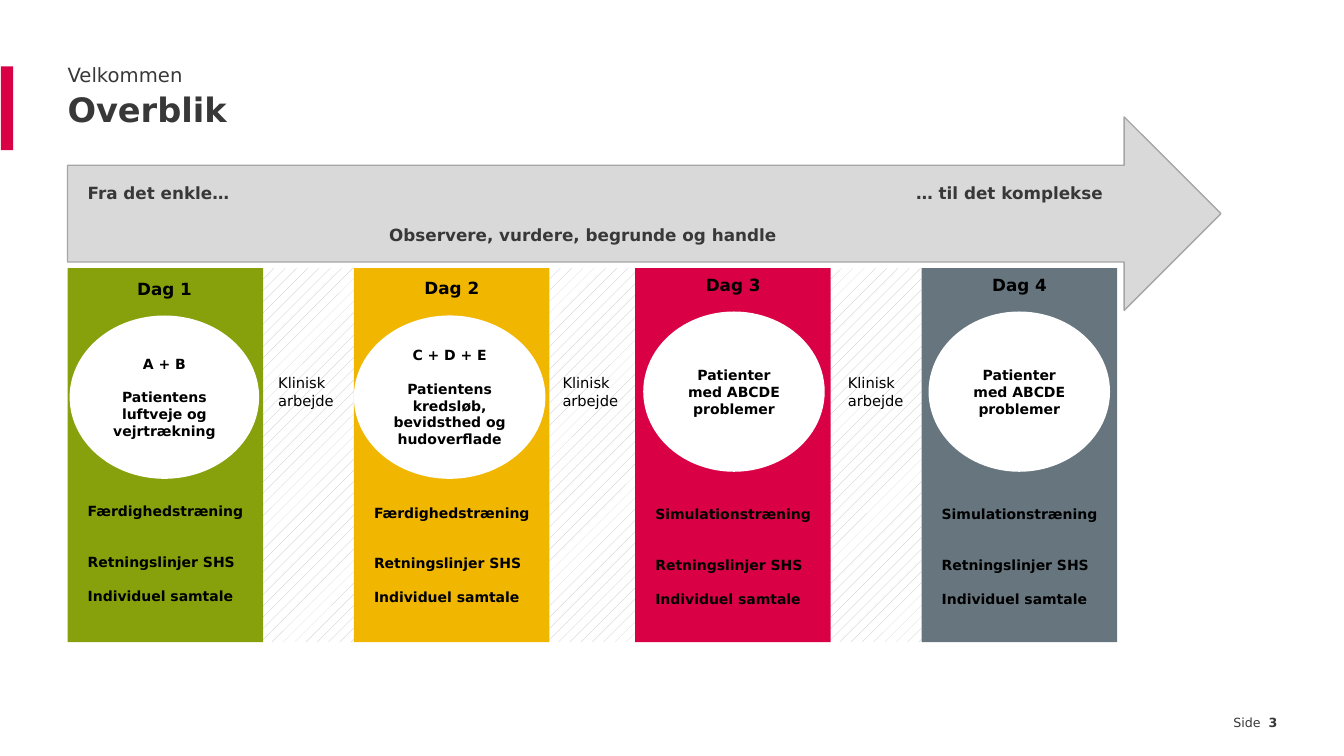
import pptx
import pptx.dml.color
import pptx.enum.dml
import pptx.enum.shapes
import pptx.enum.text
import pptx.oxml
import pptx.oxml.ns
import pptx.util

Inches, Pt = pptx.util.Inches, pptx.util.Pt
SHAPE = pptx.enum.shapes.MSO_SHAPE
ALIGN = pptx.enum.text.PP_ALIGN
ANCHOR = pptx.enum.text.MSO_ANCHOR

COLORS = {
    "text": "383838", "black": "000000", "white": "FFFFFF",
    "arrow": "D9D9D9", "arrow_line": "A6A6A6", "hatch": "BFBFBF",
    "green": "86A10B", "yellow": "F0B600", "red": "DA0046", "slate": "66757E",
}
COLUMN_TOP, COLUMN_W, COLUMN_H = 2.66, 1.94, 3.71
PATIENT = [("Patienter med ABCDE problemer", 0)]

# Ellipse and label positions are in inches; topics_top is measured from the column top.
DAYS = [
    dict(left=0.67, color="green", ellipse=(0.69, 3.13, 1.88, 1.62),
         label=(1.36, 2.77), topics_top=2.33, training="Færdighedstræning",
         focus=[("A + B", 0), ("Patientens", 11.9), ("luftveje og", 0),
                ("vejrtrækning", 0)]),
    dict(left=3.51, color="yellow", ellipse=(3.51, 3.13, 1.9, 1.62),
         label=(4.21, 2.76), topics_top=2.34, training="Færdighedstræning",
         focus=[("C + D + E", 0), ("Patientens kredsløb, bevidsthed og", 11.9),
                ("hudoverflade", 0)]),
    dict(left=6.3, color="red", ellipse=(6.38, 3.09, 1.8, 1.59),
         label=(7, 2.73), topics_top=2.36, training="Simulationstræning",
         focus=PATIENT),
    dict(left=9.14, color="slate", ellipse=(9.21, 3.09, 1.8, 1.59),
         label=(9.84, 2.73), topics_top=2.36, training="Simulationstræning",
         focus=PATIENT),
]
CLINIC_LEFTS = [2.76, 5.58, 8.41]


def rgb(name):
    return pptx.dml.color.RGBColor.from_string(COLORS[name])


def set_attributes(obj, values):
    for name, value in values.items():
        setattr(obj, name, value)


def add_run(p, text, size, color="black", bold=False):
    r = p.add_run()
    r.text = text
    set_attributes(r.font, dict(name="DejaVu Sans", size=Pt(size), bold=bold))
    r.font.color.rgb = rgb(color)


def set_frame(sp, margins=(0, 0, 0, 0), anchor=ANCHOR.TOP, wrap=True):
    """Set left, top, right and bottom margins, anchor and wrapping."""
    tf = sp.text_frame
    sides = ("margin_left", "margin_top", "margin_right", "margin_bottom")
    set_attributes(tf, dict(zip(sides, map(Inches, margins))))
    set_attributes(tf, dict(vertical_anchor=anchor, word_wrap=wrap))
    return tf


def write_lines(tf, lines, size, color="black", bold=True, align=ALIGN.LEFT):
    """Write (text, space before in points) pairs as paragraphs."""
    for i, (text, before) in enumerate(lines):
        p = tf.add_paragraph() if i else tf.paragraphs[0]
        p.alignment = align
        if before:
            p.space_before = Pt(before)
        add_run(p, text, size, color, bold)


def add_label(s, box, text, size, color="black", bold=False, wrap=True):
    sp = s.shapes.add_textbox(*map(Inches, box))
    tf = set_frame(sp, wrap=wrap)
    write_lines(tf, [(text, 0)], size, color, bold)
    return tf


def add_block(s, kind, box, color):
    sp = s.shapes.add_shape(kind, *map(Inches, box))
    sp.shadow.inherit = False
    sp.fill.solid()
    sp.fill.fore_color.rgb = rgb(color)
    sp.line.fill.background()
    return sp


def add_tab(p, position, align):
    tabs = pptx.oxml.parse_xml(
        f'<a:tabLst {pptx.oxml.ns.nsdecls("a")}>'
        f'<a:tab pos="{Inches(position)}" algn="{align}"/></a:tabLst>')
    p._p.get_or_add_pPr().append(tabs)


def add_progress_arrow(s):
    sp = add_block(s, SHAPE.RIGHT_ARROW, (0.67, 1.16, 11.44, 1.92), "arrow")
    sp.line.color.rgb = rgb("arrow_line")
    sp.line.width = Pt(1)
    tf = set_frame(sp, (0.2, 0.1, 0.2, 0.1), ANCHOR.MIDDLE)
    write_lines(tf, [("Fra det enkle…\t… til det komplekse", 0),
                     ("\tObservere, vurdere, begrunde og handle", 15.3)],
                12, "text")
    for p, (position, align) in zip(tf.paragraphs, [(10.07, "r"), (2.99, "l")]):
        add_tab(p, position, align)


def add_day(s, number, day):
    box = (day["left"], COLUMN_TOP, COLUMN_W, COLUMN_H)
    column = add_block(s, SHAPE.RECTANGLE, box, day["color"])
    tf = set_frame(column, (0.2, day["topics_top"], 0.1, 0.1))
    write_lines(tf, [(day["training"], 0), ("Retningslinjer SHS", 23.8),
                     ("Individuel samtale", 12.3)], 10)
    ellipse = add_block(s, SHAPE.OVAL, day["ellipse"], "white")
    tf = set_frame(ellipse, (0.1, 0.05, 0.1, 0.05), ANCHOR.MIDDLE)
    write_lines(tf, day["focus"], 10, align=ALIGN.CENTER)
    add_label(s, (*day["label"], 0.55, 0.2), f"Dag {number}", 12,
              bold=True, wrap=False)


def add_clinic(s, day, next_day, text_left):
    """Add the hatched clinical period between two days."""
    left = day["left"] + COLUMN_W
    box = (left, COLUMN_TOP, next_day["left"] - left, COLUMN_H)
    sp = add_block(s, SHAPE.RECTANGLE, box, "white")
    sp.fill.patterned()
    sp.fill.pattern = pptx.enum.dml.MSO_PATTERN.PERCENT_10
    sp.fill.fore_color.rgb = rgb("hatch")
    sp.fill.back_color.rgb = rgb("white")
    add_label(s, (text_left, 3.71, 0.6, 0.35), "Klinisk arbejde", 10.5)


def add_heading(s):
    add_block(s, SHAPE.RECTANGLE, (0.01, 0.66, 0.12, 0.83), "red")
    add_label(s, (0.67, 0.62, 12, 0.24), "Velkommen", 14, "text")
    tf = add_label(s, (0.67, 0.93, 12, 0.58), "Overblik", 24, "text", bold=True)
    tf.paragraphs[0].line_spacing = 0.9


def add_page_number(s):
    tf = add_label(s, (10.99, 7.09, 1.68, 0.16), "Side  ", 9, "text")
    p = tf.paragraphs[0]
    p.alignment = ALIGN.RIGHT
    add_run(p, "3", 9, "text", bold=True)


def main():
    prs = pptx.Presentation()
    prs.slide_width, prs.slide_height = Inches(13.33), Inches(7.5)
    s = prs.slides.add_slide(prs.slide_layouts[6])
    add_heading(s)
    add_progress_arrow(s)
    for day, next_day, text_left in zip(DAYS, DAYS[1:], CLINIC_LEFTS):
        add_clinic(s, day, next_day, text_left)
    for number, day in enumerate(DAYS, 1):
        add_day(s, number, day)
    add_page_number(s)
    prs.save("out.pptx")


if __name__ == "__main__":
    main()
